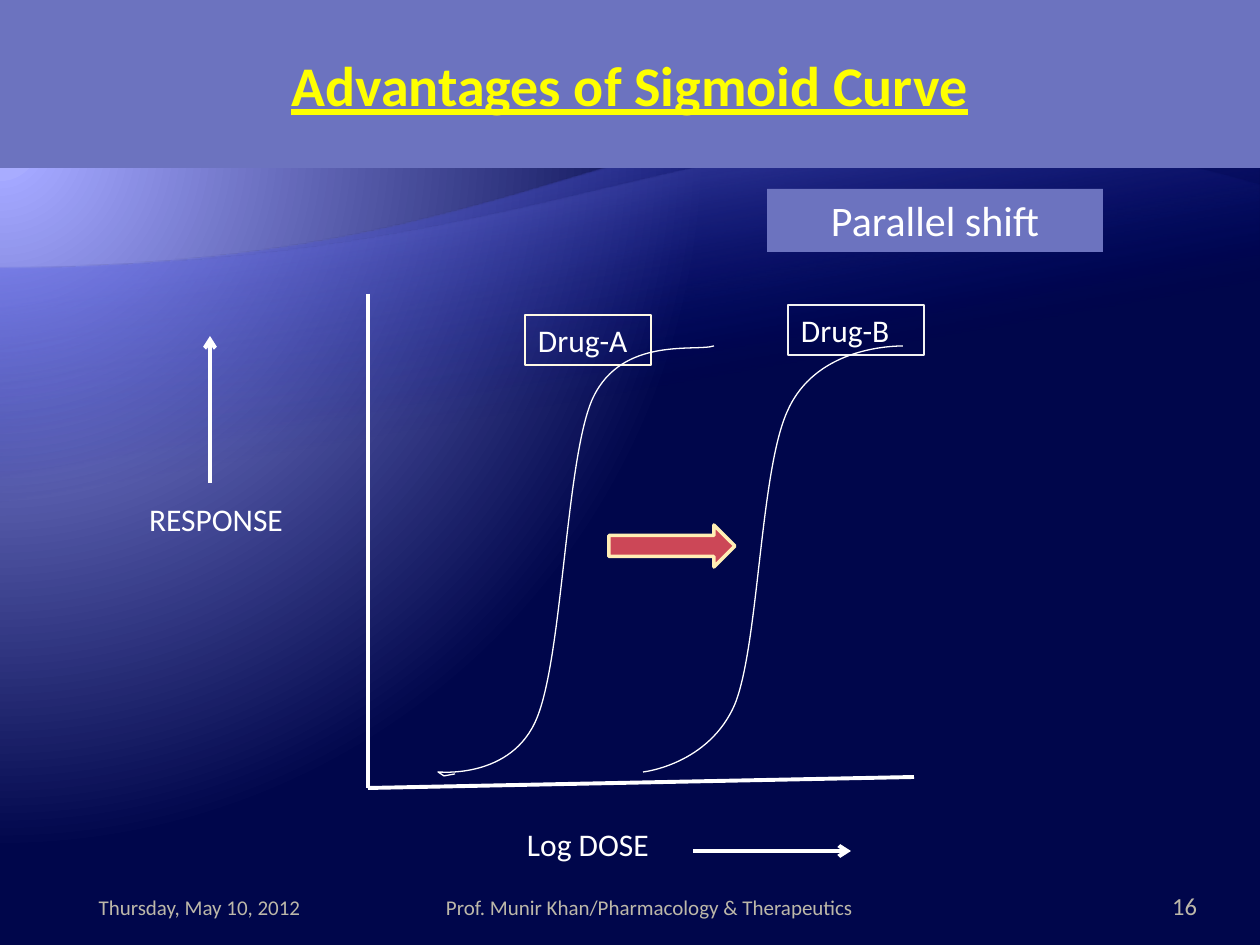
from lxml import etree
from pptx import Presentation, util as u
from pptx.dml.color import RGBColor
from pptx.enum import shapes, text
from pptx.oxml import parse_xml
from pptx.oxml.ns import nsdecls, qn

SCALE = 914400 / 126
COLORS = {
    "white": "FFFFFF", "yellow": "FFFF00", "band": "6C73BF", "footer": "BDB8A9",
    "cream": "FFF9E5", "pale": "F2F2F2", "red": "CC4757", "gold": "FFEEB5",
    "navy": "00064B", "glow": "A8ACFF", "halo": "A3A7FF", "blue": "000D9E", "violet": "797FFF",
}


def apply_gradient(fill, element, stops, direction):
    """Fill with stops given as (position %, color name, opacity %)."""
    fill.gradient()
    stop_xml = "".join(
        f'<a:gs pos="{position * 1000}"><a:srgbClr val="{COLORS[color]}">'
        f'<a:alpha val="{opacity * 1000}"/></a:srgbClr></a:gs>'
        for position, color, opacity in stops)
    gradient = parse_xml(f'<a:gradFill {nsdecls("a")} rotWithShape="1">'
                         f'<a:gsLst>{stop_xml}</a:gsLst>{direction}</a:gradFill>')
    old = element.find(".//" + qn("a:gradFill"))
    old.getparent().replace(old, gradient)


def add_curve(box, start, cubics, corners, close):
    """Add a freeform framed by box: cubic curves, then straight lines to the corners."""
    left, top, right, bottom = box
    builder = slide.shapes.build_freeform(left, top, scale=SCALE)
    builder.add_line_segments([(right, bottom)], close=False)
    shape = builder.convert_to_shape()
    shape.shadow.inherit = False
    outline = shape._element.find(".//" + qn("a:path"))
    outline.set("w", str(round((right - left) * SCALE)))
    outline.set("h", str(round((bottom - top) * SCALE)))
    for command in list(outline):
        outline.remove(command)
    commands = [("moveTo", [start])]
    commands += [("cubicBezTo", points) for points in cubics]
    commands += [("lnTo", [corner]) for corner in corners]
    if close:
        commands.append(("close", []))
    for name, points in commands:
        command = etree.SubElement(outline, qn("a:" + name))
        for x, y in points:
            etree.SubElement(command, qn("a:pt"), x=str(round((x - left) * SCALE)),
                             y=str(round((y - top) * SCALE)))
    return shape


presentation = Presentation()
presentation.slide_width = u.Inches(10)
presentation.slide_height = u.Inches(7.5)
slide = presentation.slides.add_slide(presentation.slide_layouts[6])

# Background glow and waves, the waves turned upside down
apply_gradient(
    slide.background.fill, slide._element,
    [(5, "glow", 100), (5, "halo", 100), (90, "navy", 100)],
    '<a:path path="circle"><a:fillToRect l="20000" t="30000" r="135000" b="100000"/></a:path>')
for top, bottom, shoulder, control, color, opacity in (
    (158, 924, 814, (587, 1076), "violet", 55),
    (185, 803, 720, (507, 949), "halo", 30),
):
    wave = add_curve((0, top, 1260, bottom), (1260, shoulder),
                     [((630, shoulder), control, (0, bottom))], [(0, top), (1260, top)], True)
    wave.rotation = 180
    wave.line.fill.background()
    apply_gradient(wave.fill, wave._element, [(65, "blue", 0), (100, color, opacity)],
                   '<a:lin ang="4800000" scaled="0"/>')

# Text: box, fill, outline, wording, size, color, alignment, anchor, insets
LEFT, CENTER, RIGHT = text.PP_ALIGN.LEFT, text.PP_ALIGN.CENTER, text.PP_ALIGN.RIGHT
TOP, MIDDLE, BOTTOM = text.MSO_ANCHOR.TOP, text.MSO_ANCHOR.MIDDLE, text.MSO_ANCHOR.BOTTOM
INSETS = (13, 6, 13, 6)
TITLE = "Advantages of Sigmoid Curve"
for box, fill, outline, wording, size, color, alignment, anchor, insets in (
    ((0, 0, 1260, 168), "band", None, TITLE, 32, "yellow", CENTER, MIDDLE, (0, 1, 0, 1)),
    ((63, 876, 273, 50), None, None, "Thursday, May 10, 2012", 12, "footer",
     CENTER, BOTTOM, INSETS),
    ((336, 876, 640, 50), None, None, "Prof. Munir Khan/Pharmacology & Therapeutics", 12,
     "footer", CENTER, BOTTOM, (0, 6, 13, 6)),
    ((1124, 876, 73, 50), None, None, "16", 14, "footer", RIGHT, BOTTOM, (13, 6, 0, 6)),
    ((767, 189, 336, 63), "band", None, "Parallel shift", 24, "white", CENTER, TOP, INSETS),
    ((525, 315, 126, 50), None, "cream", "Drug-A", 18, "white", LEFT, TOP, INSETS),
    ((788, 305, 136, 50), None, "pale", "Drug-B", 18, "white", LEFT, TOP, INSETS),
    ((514, 819, 199, 50), None, None, "Log DOSE", 18, "white", LEFT, TOP, INSETS),
    ((136, 494, 210, 50), None, None, "RESPONSE", 18, "white", LEFT, TOP, INSETS),
):
    position = [round(v * SCALE) for v in box]
    if fill or outline:
        shape = slide.shapes.add_shape(shapes.MSO_SHAPE.RECTANGLE, *position)
        shape.shadow.inherit = False
    else:
        shape = slide.shapes.add_textbox(*position)
    if fill:
        shape.fill.solid()
        shape.fill.fore_color.rgb = RGBColor.from_string(COLORS[fill])
    else:
        shape.fill.background()
    if outline:
        shape.line.color.rgb = RGBColor.from_string(COLORS[outline])
        shape.line.width = u.Pt(0.75)
    else:
        shape.line.fill.background()
    frame = shape.text_frame
    frame.word_wrap = True
    frame.vertical_anchor = anchor
    frame.margin_left, frame.margin_top, frame.margin_right, frame.margin_bottom = (
        round(v * SCALE) for v in insets)
    paragraph = frame.paragraphs[0]
    paragraph.alignment = alignment
    run = paragraph.add_run()
    run.text = wording
    run.font.name = "Calibri"
    run.font.size = u.Pt(size)
    run.font.color.rgb = RGBColor.from_string(COLORS[color])
    if wording == TITLE:
        run.font.bold = run.font.underline = True

# Dose-response curves
curve_a = [((696, 352), (622, 336), (593, 398)),
           ((566, 456), (563, 655), (537, 718)),
           ((512, 780), (438, 772), (438, 772))]
curve_b = [((886, 346), (815, 350), (788, 410)),
           ((760, 469), (759, 644), (735, 704)),
           ((709, 765), (643, 772), (643, 772))]
for box, start, cubics, corners in (
    ((438, 336, 714, 780), (714, 346), curve_a, [(444, 776), (455, 774)]),
    ((643, 346, 903, 772), (903, 346), curve_b, []),
):
    curve = add_curve(box, start, cubics, corners, False)
    curve.fill.background()
    curve.line.color.rgb = RGBColor.from_string(COLORS["white"])
    curve.line.width = u.Pt(0.75)

# Axes and direction arrows
for x1, y1, x2, y2, arrow in (
    (368, 294, 368, 788, False),
    (368, 788, 914, 777, False),
    (210, 483, 210, 336, True),
    (693, 851, 851, 851, True),
):
    line = slide.shapes.add_connector(
        shapes.MSO_CONNECTOR.STRAIGHT, *(round(v * SCALE) for v in (x1, y1, x2, y2)))
    line.line.color.rgb = RGBColor.from_string(COLORS["white"])
    line.line.width = u.Pt(2.25)
    if arrow:
        etree.SubElement(line.line._get_or_add_ln(), qn("a:tailEnd"), type="arrow")
    etree.SubElement(line._element.spPr, qn("a:effectLst"))

# Arrow showing the shift from drug A to drug B
shift_arrow = slide.shapes.add_shape(
    shapes.MSO_SHAPE.RIGHT_ARROW, *(round(v * SCALE) for v in (609, 525, 126, 42)))
shift_arrow.shadow.inherit = False
shift_arrow.fill.solid()
shift_arrow.fill.fore_color.rgb = RGBColor.from_string(COLORS["red"])
shift_arrow.line.color.rgb = RGBColor.from_string(COLORS["gold"])
shift_arrow.line.width = u.Pt(2)

presentation.save("out.pptx")
